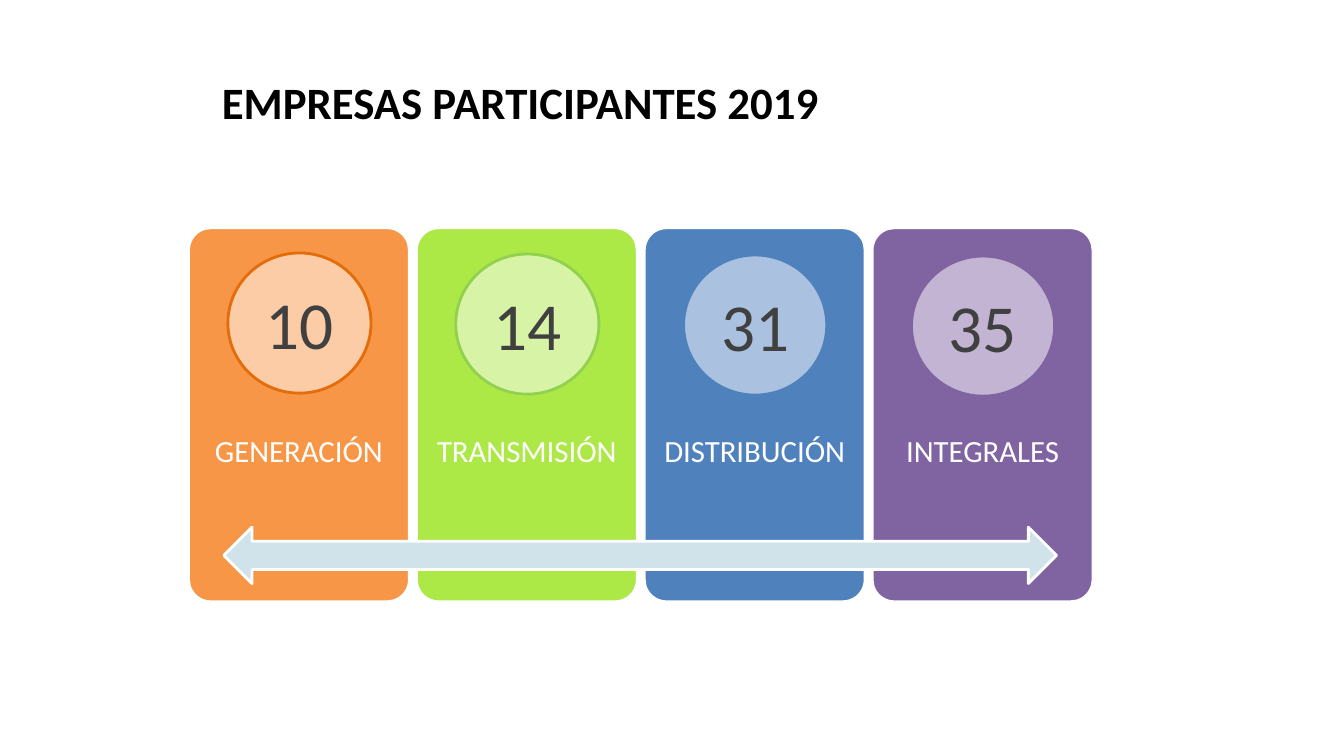
from pptx import Presentation
from pptx import util as u
from pptx.dml.color import RGBColor
from pptx.enum import shapes, text
from pptx.oxml import parse_xml
from pptx.oxml.ns import nsdecls

PX = 9144
FONT = "Calibri"
BLACK = RGBColor(0x00, 0x00, 0x00)
WHITE = RGBColor(0xFF, 0xFF, 0xFF)
GREY = RGBColor(0x40, 0x40, 0x40)
PALE_BLUE = RGBColor(0xD0, 0xE3, 0xEA)
ORANGE = RGBColor(0xF7, 0x96, 0x46)
DARK_ORANGE = RGBColor(0xE4, 0x6C, 0x0A)
LIME = RGBColor(0xAC, 0xE9, 0x46)
GREEN = RGBColor(0x92, 0xD0, 0x50)
BLUE = RGBColor(0x4F, 0x81, 0xBD)
PURPLE = RGBColor(0x80, 0x64, 0xA2)

COMPANIES = [
    ("GENERACIÓN", "10", ORANGE, DARK_ORANGE, 25),
    ("TRANSMISIÓN", "14", LIME, GREEN, 26),
    ("DISTRIBUCIÓN", "31", BLUE, BLUE, 27),
    ("INTEGRALES", "35", PURPLE, PURPLE, 28),
]


def px(length):
    """Turn pixels into EMU."""
    return u.Emu(length * PX)


def add_figure(slide, kind, box, fill, line):
    """Add a flat preset shape with a two-point outline."""
    figure = slide.shapes.add_shape(kind, *map(px, box))
    figure.shadow.inherit = False
    figure.fill.solid()
    figure.fill.fore_color.rgb = fill
    figure.line.color.rgb = line
    figure.line.width = u.Pt(2)
    return figure


def write(figure, words, size, color, align=text.PP_ALIGN.CENTER, bold=False):
    """Write one vertically centred paragraph into a shape."""
    frame = figure.text_frame
    frame.text = words
    frame.word_wrap = True
    frame.auto_size = text.MSO_AUTO_SIZE.NONE
    frame.vertical_anchor = text.MSO_ANCHOR.MIDDLE
    paragraph = frame.paragraphs[0]
    paragraph.alignment = align
    paragraph.font.name = FONT
    paragraph.font.size = u.Pt(size)
    paragraph.font.bold = bold
    paragraph.font.color.rgb = color
    return frame


def add_title(slide, box, words):
    """Place and format the title placeholder."""
    title = slide.shapes.title
    title.left, title.top, title.width, title.height = map(px, box)
    write(title, words, 32, BLACK, text.PP_ALIGN.LEFT, True)


def add_card(slide, box, label, fill):
    """Draw one coloured card with its label."""
    card = add_figure(slide, shapes.MSO_SHAPE.ROUNDED_RECTANGLE, box, fill, WHITE)
    card.adjustments[0] = 0.1
    frame = write(card, label, 22, WHITE)
    frame.margin_left = frame.margin_right = px(10)
    frame.margin_top, frame.margin_bottom = px(160), px(85)
    frame.paragraphs[0].line_spacing = 0.9


def add_count(slide, box, count, line):
    """Draw a translucent circle holding the number of companies."""
    circle = add_figure(slide, shapes.MSO_SHAPE.OVAL, box, WHITE, line)
    color = circle.fill._xPr.find(".//{*}solidFill/{*}srgbClr")
    color.append(parse_xml(f'<a:alpha {nsdecls("a")} val="52000"/>'))
    write(circle, count, 48, GREY)


def add_companies(slide, box):
    """Lay out the cards, the arrow across them and the counts."""
    left, top, width, height = box
    gap = 7
    card_width = (width - gap * (len(COMPANIES) - 1)) // len(COMPANIES)
    lefts = [left + i * (card_width + gap) for i in range(len(COMPANIES))]
    for card_left, (label, _, fill, _, _) in zip(lefts, COMPANIES):
        add_card(slide, (card_left, top, card_width, height), label, fill)
    add_figure(slide, shapes.MSO_SHAPE.LEFT_RIGHT_ARROW,
               (left + 35, top + 297, width - 71, 56), PALE_BLUE, WHITE)
    for card_left, (_, count, _, line, drop) in zip(lefts, COMPANIES):
        add_count(slide, (card_left + 39, top + drop, 142, 139), count, line)


def main():
    """Build and save the slide."""
    deck = Presentation()
    deck.slide_width, deck.slide_height = px(1333), px(750)
    slide = deck.slides.add_slide(deck.slide_layouts[5])
    add_title(slide, (210, 52, 900, 98), "EMPRESAS PARTICIPANTES 2019")
    add_companies(slide, (187, 226, 897, 371))
    deck.save("out.pptx")


if __name__ == "__main__":
    main()
